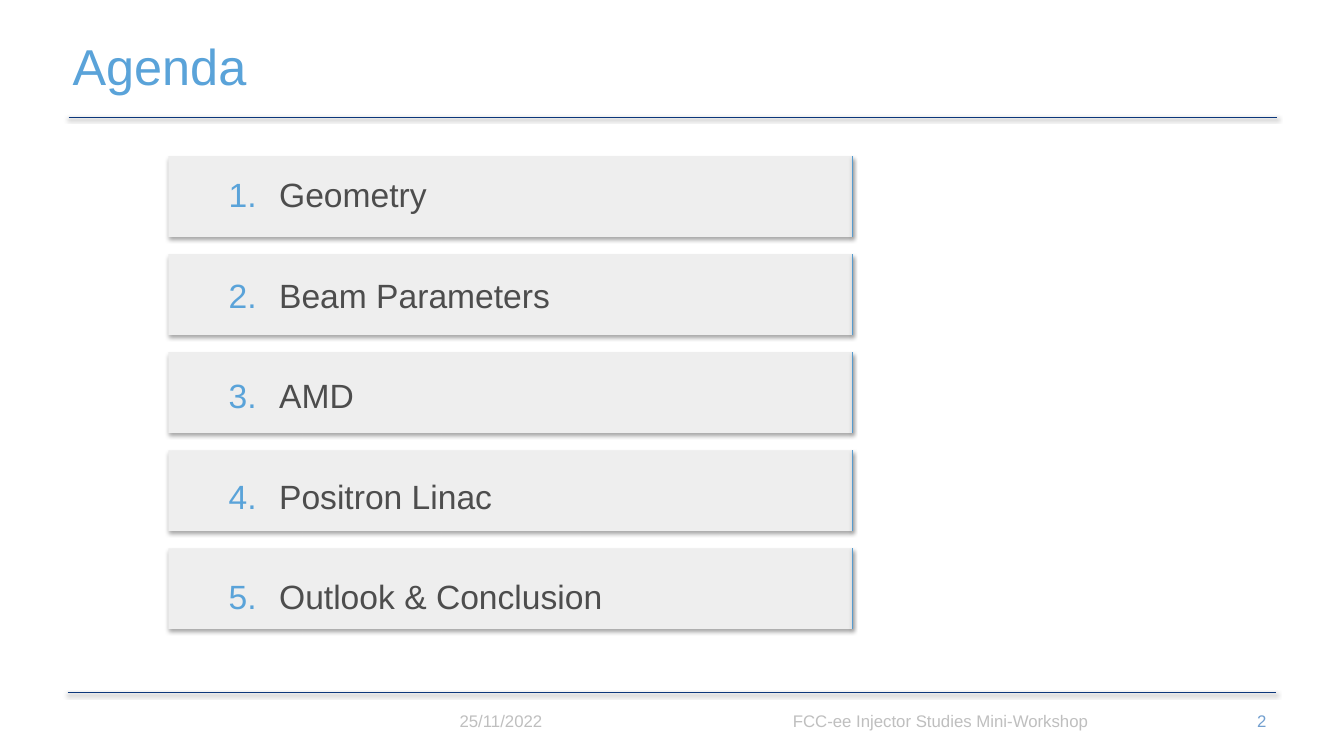
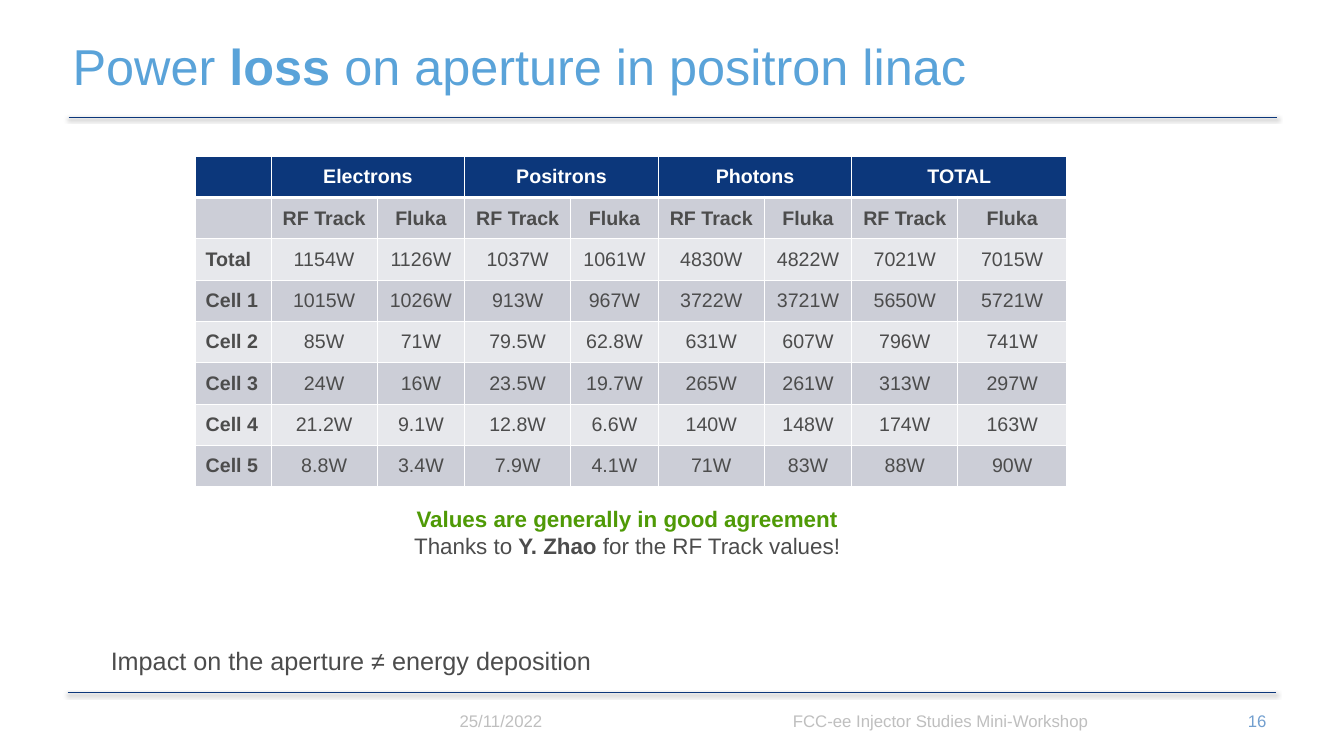
from lxml import etree
from pptx import Presentation
from pptx.dml.color import RGBColor
from pptx.enum.shapes import MSO_CONNECTOR, MSO_SHAPE
from pptx.enum.text import MSO_ANCHOR, PP_ALIGN
from pptx.oxml.ns import qn
from pptx.util import Inches, Pt

LEFT, CENTER, RIGHT = PP_ALIGN.LEFT, PP_ALIGN.CENTER, PP_ALIGN.RIGHT
TOP, MIDDLE = MSO_ANCHOR.TOP, MSO_ANCHOR.MIDDLE
RECT, STRAIGHT = MSO_SHAPE.RECTANGLE, MSO_CONNECTOR.STRAIGHT

FONT = "Arial"
SKY, NAVY, EDGE, PAGE = "5AA3D9", "0C377B", "569BCE", "729FCF"
TEXT, ITEM, FOOT, PANEL = "4C4C4C", "4D4D4D", "BFBFBF", "EEEEEE"
WHITE, GREEN, DARK, LIGHT = "FFFFFF", "4F9A06", "CCCED7", "E7E8EC"

DATE = "25/11/2022"
EVENT = "FCC-ee Injector Studies Mini-Workshop"
AGENDA = ["Geometry", "Beam Parameters", "AMD", "Positron Linac", "Outlook & Conclusion"]
LOSS = ["Power ", ("loss", {"bold": True}), " on aperture in positron linac"]
GROUPS = ["Electrons", "Positrons", "Photons", "TOTAL"]
CODES = ["RF Track", "Fluka"]
POWER = [
    ("Total", 1154, 1126, 1037, 1061, 4830, 4822, 7021, 7015),
    ("Cell 1", 1015, 1026, 913, 967, 3722, 3721, 5650, 5721),
    ("Cell 2", 85, 71, 79.5, 62.8, 631, 607, 796, 741),
    ("Cell 3", 24, 16, 23.5, 19.7, 265, 261, 313, 297),
    ("Cell 4", 21.2, 9.1, 12.8, 6.6, 140, 148, 174, 163),
    ("Cell 5", 8.8, 3.4, 7.9, 4.1, 71, 83, 88, 90),
]
WIDTHS = [0.75] + [1.05, 0.87] * 3 + [1.05, 1.08]
ROW = 0.41
NOTE = [
    [("Values are generally in good agreement", {"bold": True, "color": GREEN})],
    ["Thanks to ", ("Y. Zhao ", {"bold": True}), "for the RF Track values!"],
]
CLAIM = "Impact on the aperture ≠ energy deposition"


def rgb(code):
    return RGBColor.from_string(code)


def node(parent, tag, **attrs):
    return etree.SubElement(parent, qn(tag), attrs)


def tint(parent, code):
    return node(node(parent, "a:solidFill"), "a:srgbClr", val=code)


def number(para, color):
    props = para._p.get_or_add_pPr()
    props.set("marL", str(Inches(0.5)))
    props.set("indent", str(Inches(-0.5)))
    node(node(props, "a:buClr"), "a:srgbClr", val=color)
    node(props, "a:buFont", typeface="+mj-lt")
    node(props, "a:buAutoNum", type="arabicPeriod")


def write(frame, lines, size=12, color=TEXT, bold=False, align=LEFT, after=0, mark=None):
    for i, line in enumerate(lines):
        para = frame.add_paragraph() if i else frame.paragraphs[0]
        para.alignment = align
        para.space_after = Pt(after)
        if mark:
            number(para, mark)
        for part in [line] if isinstance(line, str) else line:
            words, style = (part, {}) if isinstance(part, str) else part
            run = para.add_run()
            run.text = words
            font = run.font
            font.name, font.size = FONT, Pt(size)
            font.bold = style.get("bold", bold)
            font.color.rgb = rgb(style.get("color", color))


def label(slide, lines, x, y, w, h, anchor=TOP, inset=0.1, **style):
    frame = slide.shapes.add_textbox(Inches(x), Inches(y), Inches(w), Inches(h)).text_frame
    frame.word_wrap = True
    frame.vertical_anchor = anchor
    frame.margin_left = frame.margin_right = Inches(inset)
    write(frame, lines, **style)


def shade(shape, dist, alpha):
    props = shape._element.spPr
    for old in props.findall(qn("a:effectLst")):
        props.remove(old)
    cast = node(node(props, "a:effectLst"), "a:outerShdw", blurRad=str(Pt(3.1)),
                dist=str(Pt(dist)), dir="5400000", rotWithShape="0")
    node(node(cast, "a:srgbClr", val="000000"), "a:alpha", val=str(alpha * 1000))


def rule(slide, x1, y1, x2, y2, color, width):
    line = slide.shapes.add_connector(STRAIGHT, Inches(x1), Inches(y1), Inches(x2), Inches(y2))
    line.line.color.rgb = rgb(color)
    line.line.width = Pt(width)
    shade(line, 1.6, 38)


def base(deck, title, page):
    slide = deck.slides.add_slide(deck.slide_layouts[6])
    for left, y in ((0.67, 6.87), (0.68, 1.16)):
        rule(slide, left, y, left + 11.99, y, NAVY, 0.5)
    label(slide, [title], 0.67, 0.26, 12, 0.78, MIDDLE, 0.05, size=36, color=SKY)
    for words, x, w, align, color in (
        (DATE, 4.46, 2, LEFT, FOOT),
        (EVENT, 7.06, 4.54, CENTER, FOOT),
        (str(page), 11.6, 1.06, RIGHT, PAGE),
    ):
        label(slide, [words], x, 6.95, w, 0.4, MIDDLE, align=align, color=color)
    return slide


def agenda(deck):
    slide = base(deck, "Agenda", 2)
    left, top, width, height = 1.67, 1.55, 6.79, 0.8
    step = (5.44 - top) / (len(AGENDA) - 1)
    for i in range(len(AGENDA)):
        y = top + i * step
        panel = slide.shapes.add_shape(RECT, Inches(left), Inches(y), Inches(width), Inches(height))
        panel.fill.solid()
        panel.fill.fore_color.rgb = rgb(PANEL)
        panel.line.fill.background()
        shade(panel, 1.8, 35)
        rule(slide, left + width, y, left + width, y + height, EDGE, 0.75)
    label(slide, AGENDA, 2.17, 1.68, 5.82, 4.48, size=24, color=ITEM, after=43, mark=SKY)


def paint(cell, fill, base_width):
    cell.fill.solid()
    cell.fill.fore_color.rgb = rgb(fill)
    props = cell._tc.get_or_add_tcPr()
    for i, side in enumerate("LRTB"):
        edge = node(props, "a:ln" + side, w=str(Pt(base_width if side == "B" else 1)))
        tint(edge, WHITE)
        props.insert(i, edge)


def losses(deck):
    slide = base(deck, LOSS, 16)
    head = [""] + [word for group in GROUPS for word in (group, "")]
    rows = [head, [""] + CODES * len(GROUPS)]
    rows += [[name] + [f"{watt}W" for watt in watts] for name, *watts in POWER]
    frame = slide.shapes.add_table(len(rows), len(WIDTHS), Inches(1.94), Inches(1.55),
                                   Inches(sum(WIDTHS)), Inches(ROW * len(rows)))
    table = frame.table
    for col, width in zip(table.columns, WIDTHS):
        col.width = Inches(width)
    for r, row in enumerate(rows):
        table.rows[r].height = Inches(ROW)
        fill = NAVY if r == 0 else DARK if r % 2 else LIGHT
        for c, words in enumerate(row):
            cell = table.cell(r, c)
            paint(cell, fill, 1 if r else 3)
            cell.vertical_anchor = MIDDLE
            if words:
                write(cell.text_frame, [words], size=14, color=TEXT if r else WHITE,
                      bold=r < 2 or c == 0, align=CENTER if c else LEFT)
    for c in range(1, len(WIDTHS), 2):
        table.cell(0, c).merge(table.cell(0, c + 1))
    label(slide, NOTE, 1.86, 4.96, 8.72, 0.64, size=16, align=CENTER)
    label(slide, [CLAIM], 1, 6.35, 11.58, 0.4, size=18)


def main():
    deck = Presentation()
    deck.slide_width, deck.slide_height = Inches(13.33), Inches(7.5)
    agenda(deck)
    losses(deck)
    deck.save("out.pptx")


if __name__ == "__main__":
    main()
